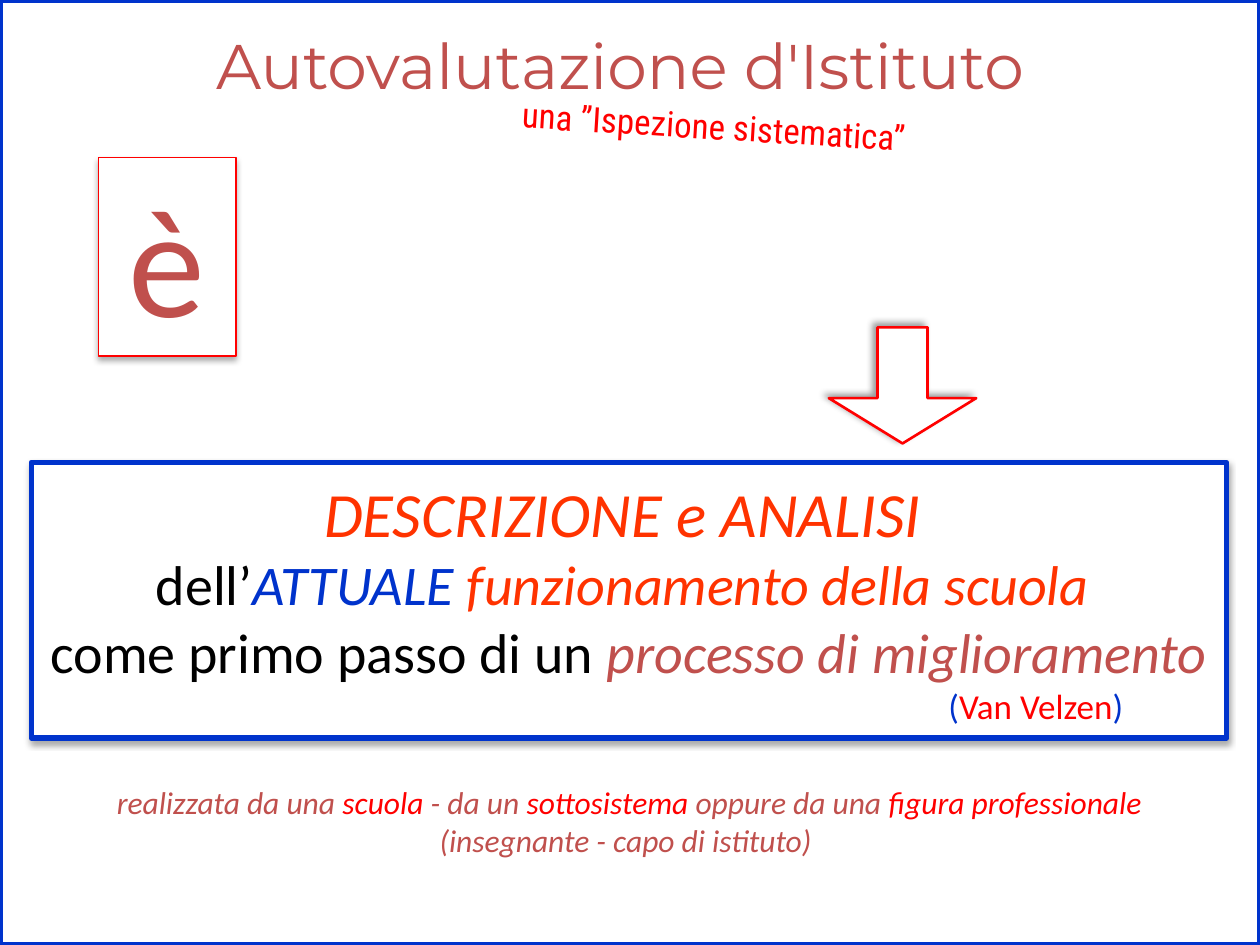
from dataclasses import dataclass

import lxml.etree
import pptx
import pptx.dml.color
import pptx.enum.shapes
import pptx.enum.text
import pptx.oxml.ns
import pptx.shapes.base
import pptx.slide
import pptx.text.text
import pptx.util

Cm = pptx.util.Cm
Pt = pptx.util.Pt
KIND = pptx.enum.shapes.MSO_SHAPE
ALIGN = pptx.enum.text.PP_ALIGN
ANCHOR = pptx.enum.text.MSO_ANCHOR
qn = pptx.oxml.ns.qn

HEX = {
    "black": "000000",
    "white": "FFFFFF",
    "blue": "0033CC",
    "red": "FF0000",
    "orange": "FF3300",
    "brick": "C0504D",
}


@dataclass
class Shade:
    """Outer shadow: blur and reach in points, angle in degrees."""
    blur: float
    reach: float
    angle: int
    alpha: int


@dataclass
class Piece:
    """Piece of a line that has one look."""
    text: str
    tint: str
    size: float
    slant: bool = False
    face: str = "Calibri"


@dataclass
class Row:
    """Paragraph; an indent in cm makes it start from the left."""
    bits: list[Piece]
    indent: float = 0


@dataclass
class Block:
    """Shape or text box, with its place in cm."""
    place: tuple[float, float, float, float]
    rows: list[Row]
    kind: KIND | None = None
    fill: str | None = None
    line: str | None = None
    width: float = 0
    shade: Shade | None = None
    turn: float = 0
    wrap: bool = True
    anchor: ANCHOR = ANCHOR.TOP
    adjust: tuple[float, ...] = ()


def tint(color: pptx.dml.color.ColorFormat, name: str) -> None:
    color.rgb = pptx.dml.color.RGBColor.from_string(HEX[name])


def cast(shape: pptx.shapes.base.BaseShape, shade: Shade) -> None:
    """Put an outer shadow in the shape's empty effect list."""
    effects = shape._element.spPr.find(qn("a:effectLst"))
    outer = lxml.etree.SubElement(
        effects, qn("a:outerShdw"), blurRad=str(Pt(shade.blur)),
        dist=str(Pt(shade.reach)), dir=str(shade.angle * 60000),
        rotWithShape="0")
    color = lxml.etree.SubElement(outer, qn("a:srgbClr"), val=HEX["black"])
    lxml.etree.SubElement(color, qn("a:alpha"), val=str(shade.alpha * 1000))


def write(frame: pptx.text.text.TextFrame, rows: list[Row]) -> None:
    for at, row in enumerate(rows):
        para = frame.add_paragraph() if at else frame.paragraphs[0]
        para.alignment = ALIGN.LEFT if row.indent else ALIGN.CENTER
        if row.indent:
            para._p.get_or_add_pPr().set("marL", str(Cm(row.indent)))
        for piece in row.bits:
            run = para.add_run()
            run.text = piece.text
            run.font.name = piece.face
            run.font.size = Pt(piece.size)
            run.font.italic = piece.slant
            tint(run.font.color, piece.tint)


def draw(slide: pptx.slide.Slide, block: Block) -> None:
    place = [Cm(length) for length in block.place]
    if block.kind is None:
        shape = slide.shapes.add_textbox(*place)
    else:
        shape = slide.shapes.add_shape(block.kind, *place)
        shape.shadow.inherit = False
        for at, value in enumerate(block.adjust):
            shape.adjustments[at] = value
        if block.fill:
            shape.fill.solid()
            tint(shape.fill.fore_color, block.fill)
        else:
            shape.fill.background()
        tint(shape.line.color, block.line)
        shape.line.width = Pt(block.width)
        if block.shade:
            cast(shape, block.shade)
    shape.rotation = block.turn
    shape.text_frame.word_wrap = block.wrap
    shape.text_frame.vertical_anchor = block.anchor
    write(shape.text_frame, block.rows)


DROP = Shade(blur=3.5, reach=2.2, angle=90, alpha=32)
BACK = Shade(blur=4, reach=3, angle=225, alpha=40)

WIDE, HIGH = 25.4, 19.05

BLOCKS = [
    # Frame round the slide
    Block((0, 0, WIDE, HIGH), [], KIND.RECTANGLE, line="blue", width=3),
    # Title and slanted subtitle
    Block((1.07, 0.41, 22.86, 1.9),
          [Row([Piece("Autovalutazione d'Istituto", "brick", 36,
                      face="Montserrat")])], wrap=False),
    Block((6.15, 1.98, 16.08, 7.54),
          [Row([Piece("una ”Ispezione sistematica”", "red", 20,
                      face="Roboto Condensed")])], turn=3.5, wrap=False),
    # Main statement
    Block((0.63, 9.32, 24.1, 5.56), [
        Row([Piece("DESCRIZIONE e ANALISI", "orange", 36, True),
             Piece(" ", "black", 32)]),
        Row([Piece("dell’", "black", 32),
             Piece("ATTUALE", "blue", 32, True),
             Piece(" funzionamento della scuola ", "orange", 32, True)]),
        Row([Piece("come primo passo di un ", "black", 32),
             Piece("processo di miglioramento", "brick", 32, True)]),
        Row([Piece("(", "blue", 20),
             Piece("Van Velzen", "red", 20),
             Piece(")", "blue", 20)], indent=18.24),
    ], KIND.RECTANGLE, "white", "blue", 3, DROP, anchor=ANCHOR.MIDDLE),
    # Arrow down to the statement
    Block((16.71, 6.6, 2.97, 2.34), [], KIND.DOWN_ARROW, "white", "red", 1.5,
          BACK, adjust=(0.34, 0.39)),
    # Verb card
    Block((1.98, 3.17, 2.78, 4.01), [Row([Piece("è", "brick", 88)])],
          KIND.RECTANGLE, "white", "red", 0.75, DROP),
    # Who carries it out
    Block((0.58, 15.67, 24.21, 2.31), [Row([
        Piece("realizzata da una ", "brick", 18, True),
        Piece("scuola", "red", 18, True),
        Piece(" - da un ", "brick", 18, True),
        Piece("sottosistema", "red", 18, True),
        Piece(" oppure da una ", "brick", 18, True),
        Piece("figura professionale", "red", 18, True),
        Piece(" (insegnante - capo di istituto) ", "brick", 18, True),
    ])]),
]


def main() -> None:
    deck = pptx.Presentation()
    deck.slide_width, deck.slide_height = Cm(WIDE), Cm(HIGH)
    slide = deck.slides.add_slide(deck.slide_layouts[6])
    for block in BLOCKS:
        draw(slide, block)
    deck.save("out.pptx")


if __name__ == "__main__":
    main()
